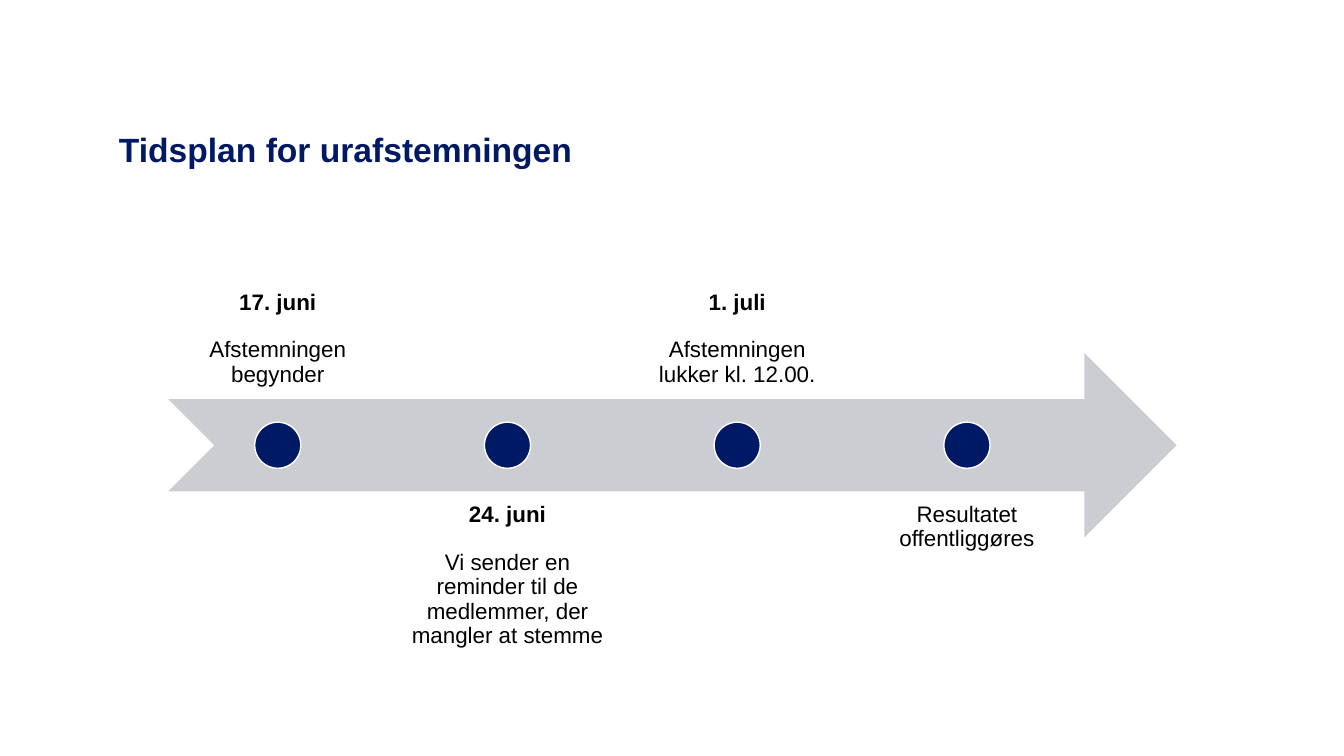
from pptx import Presentation
from pptx.dml.color import RGBColor
from pptx.enum.shapes import MSO_SHAPE as Shape
from pptx.enum.text import MSO_ANCHOR as Anchor, PP_ALIGN as Align
from pptx.util import Inches, Pt

TITLE = "Tidsplan for urafstemningen"
MILESTONES = [  # date, event
    ("17. juni", "Afstemningen begynder"),
    ("24. juni", "Vi sender en reminder til de medlemmer, der mangler at stemme"),
    ("1. juli", "Afstemningen lukker kl. 12.00."),
    (None, "Resultatet offentliggøres"),
]

NAVY = RGBColor(0x00, 0x19, 0x65)
GREY = RGBColor(0xCC, 0xCC, 0xD3)
BLACK = RGBColor(0x00, 0x00, 0x00)
WHITE = RGBColor(0xFF, 0xFF, 0xFF)
FONT = "Arial"

# Timeline area in inches: label row, arrow row, label row
LEFT, TOP, WIDTH = 1.67, 2.13, 10
ROW = 1.83
ARROW_TOP = TOP + 0.75 * ROW
LOWER_TOP = TOP + 1.5 * ROW
LABEL_WIDTH = 2.17
STEP = LABEL_WIDTH * 1.05
DOT = ROW / 4
INSET = 0.12


def add_text(slide, box, lines, size, color, anchor, inset=0):
    """Add a text box; lines are (text, bold) pairs, one paragraph each."""
    frame = slide.shapes.add_textbox(*map(Inches, box)).text_frame
    frame.word_wrap = True
    frame.vertical_anchor = anchor
    frame.margin_left = frame.margin_right = Inches(inset)
    frame.margin_top = frame.margin_bottom = Inches(inset)
    frame.text = "\n".join(text for text, _ in lines)
    for paragraph, (_, bold) in zip(frame.paragraphs, lines):
        for run in paragraph.runs:
            run.font.name = FONT
            run.font.size = Pt(size)
            run.font.bold = bold
            run.font.color.rgb = color
    return frame.paragraphs


def add_filled(slide, preset, box, fill):
    shape = slide.shapes.add_shape(preset, *map(Inches, box))
    shape.shadow.inherit = False
    shape.fill.solid()
    shape.fill.fore_color.rgb = fill
    shape.line.fill.background()
    return shape


def add_milestone(slide, index, date, event):
    left = LEFT + index * STEP
    above = index % 2 == 0
    lines = [(date, True)] if date else []
    lines.append((event, False))
    paragraphs = add_text(
        slide, (left, TOP if above else LOWER_TOP, LABEL_WIDTH, ROW), lines,
        16, BLACK, Anchor.BOTTOM if above else Anchor.TOP, INSET)
    for paragraph in paragraphs:
        paragraph.alignment = Align.CENTER
        paragraph.line_spacing = 0.9
    if date:
        paragraphs[0].space_after = Pt(17)

    dot_left = left + (LABEL_WIDTH - DOT) / 2
    dot_top = ARROW_TOP + (ROW - DOT) / 2
    dot = add_filled(slide, Shape.OVAL, (dot_left, dot_top, DOT, DOT), NAVY)
    dot.line.color.rgb = WHITE
    dot.line.width = Pt(1)


def main():
    deck = Presentation()
    deck.slide_width, deck.slide_height = Inches(13.33), Inches(7.5)
    slide = deck.slides.add_slide(deck.slide_layouts[6])

    title = add_text(slide, (1.18, 1.18, 8.08, 0.63), [(TITLE, True)],
                     24, NAVY, Anchor.MIDDLE)
    title[0].line_spacing = Pt(27)

    add_filled(slide, Shape.NOTCHED_RIGHT_ARROW,
               (LEFT, ARROW_TOP, WIDTH, ROW), GREY)
    for index, (date, event) in enumerate(MILESTONES):
        add_milestone(slide, index, date, event)

    deck.save("out.pptx")


if __name__ == "__main__":
    main()
